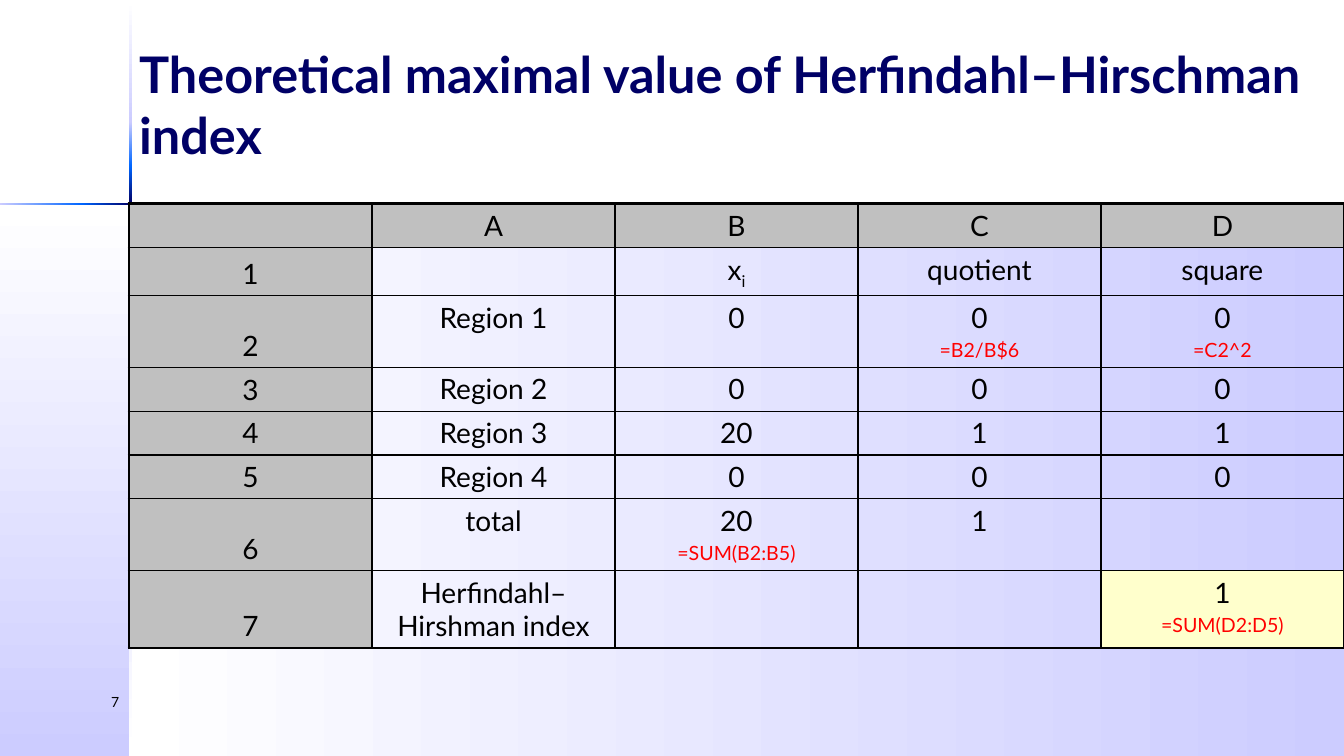
from copy import deepcopy
from dataclasses import dataclass
from itertools import pairwise

from lxml.etree import SubElement
from pptx import Presentation
from pptx.dml.color import RGBColor
from pptx.enum.shapes import MSO_SHAPE
from pptx.enum.text import MSO_ANCHOR, MSO_AUTO_SIZE, PP_ALIGN
from pptx.oxml.ns import qn
from pptx.slide import Slide
from pptx.table import _Cell
from pptx.util import Inches, Pt

FONT = "Lato"
BLACK = RGBColor(0x00, 0x00, 0x00)
WHITE = RGBColor(0xFF, 0xFF, 0xFF)
NAVY = RGBColor(0x00, 0x00, 0x66)
BLUE = RGBColor(0x00, 0x66, 0xFF)
LAVENDER = RGBColor(0xCC, 0xCC, 0xFF)
GRAY = RGBColor(0xC0, 0xC0, 0xC0)
CREAM = RGBColor(0xFF, 0xFF, 0xCC)
RED = RGBColor(0xFF, 0x00, 0x00)

SLIDE_WIDTH, SLIDE_HEIGHT = 13.33, 7.5
AXIS_X, AXIS_Y = 1.28, 2.02
PANEL_LEFT = 1.29
HAIR = 0.03, 0.02  # thickness of the upright and the level rule
OUTER_BORDER, INNER_BORDER = Pt(2.25), Pt(1)


@dataclass(frozen=True)
class Band:
    left: float
    top: float
    width: float
    height: float
    colors: tuple[RGBColor, ...]
    downward: bool


@dataclass(frozen=True)
class Entry:
    value: str = ""
    formula: str = ""
    subscript: str = ""


RISE = (LAVENDER, BLUE)
PEAK = (BLUE, NAVY, BLUE)
FALL = (BLUE, LAVENDER)
FADE = (LAVENDER, WHITE)
PANELS = [
    Band(PANEL_LEFT, AXIS_Y, SLIDE_WIDTH - PANEL_LEFT, SLIDE_HEIGHT - AXIS_Y,
         (WHITE, LAVENDER), False),
    Band(0, AXIS_Y, PANEL_LEFT, SLIDE_HEIGHT - AXIS_Y, (WHITE, LAVENDER), True),
]
UPRIGHT_STOPS = [0.01, 1.21, 1.65, 2.38, 2.82, SLIDE_HEIGHT]
UPRIGHT_COLORS = [(WHITE, LAVENDER), RISE, PEAK, FALL, FADE]
LEVEL_STOPS = [0, 0.81, 1.78, 2.36, SLIDE_WIDTH]
LEVEL_COLORS = [RISE, PEAK, FALL, FADE]
RULES = [
    Band(AXIS_X, start, HAIR[0], end - start, colors, True)
    for (start, end), colors in zip(pairwise(UPRIGHT_STOPS), UPRIGHT_COLORS)
] + [
    Band(start, AXIS_Y - 0.01, end - start, HAIR[1], colors, False)
    for (start, end), colors in zip(pairwise(LEVEL_STOPS), LEVEL_COLORS)
]

EMPTY, ZERO, ONE = Entry(), Entry("0"), Entry("1")
SHEET = [
    [Entry(letter) for letter in ("A", "B", "C", "D")],
    [EMPTY, Entry("x", subscript="i"), Entry("quotient"), Entry("square")],
    [Entry("Region 1"), ZERO, Entry("0", "=B2/B$6"), Entry("0", "=C2^2")],
    [Entry("Region 2"), ZERO, ZERO, ZERO],
    [Entry("Region 3"), Entry("20"), ONE, ONE],
    [Entry("Region 4"), ZERO, ZERO, ZERO],
    [Entry("total"), Entry("20", "=SUM(B2:B5)"), ONE, EMPTY],
    [Entry("Herfindahl–Hirshman index"), EMPTY, EMPTY, Entry("1", "=SUM(D2:D5)")],
]
ROW_HEIGHTS = [0.43] * 7 + [0.77]
COLUMN_WIDTH = 2.41


def add_run(paragraph, text: str, size: float, color: RGBColor = BLACK, bold: bool = False):
    run = paragraph.add_run()
    run.text = text
    for name, value in {"name": FONT, "size": Pt(size), "bold": bold}.items():
        setattr(run.font, name, value)
    run.font.color.rgb = color
    return run


def add_band(slide: Slide, band: Band) -> None:
    shape = slide.shapes.add_shape(
        MSO_SHAPE.RECTANGLE,
        *map(Inches, (band.left, band.top, band.width, band.height)))
    shape.shadow.inherit = False
    shape.line.fill.background()
    shape.fill.gradient()
    shape.fill.gradient_angle = 270 if band.downward else 0
    stop_list = shape._element.spPr.find(f".//{qn('a:gsLst')}")
    for _ in band.colors[2:]:
        stop_list.append(deepcopy(stop_list[-1]))
    for index, (stop, color) in enumerate(zip(shape.fill.gradient_stops, band.colors)):
        stop.position = index / (len(band.colors) - 1)
        stop.color.rgb = color


def set_borders(cell: _Cell, widths: dict[str, int]) -> None:
    properties = cell._tc.get_or_add_tcPr()
    for index, (side, width) in enumerate(widths.items()):
        line = SubElement(properties, qn(f"a:ln{side}"), w=str(width))
        fill = SubElement(line, qn("a:solidFill"))
        SubElement(fill, qn("a:srgbClr"), val=str(BLACK))
        properties.insert(index, line)


def write_entry(cell: _Cell, entry: Entry) -> None:
    lines = [(entry.value, 20, BLACK)]
    if entry.formula:
        lines.append((entry.formula, 14, RED))
    frame = cell.text_frame
    for index, (text, size, color) in enumerate(lines):
        paragraph = frame.add_paragraph() if index else frame.paragraphs[0]
        paragraph.alignment = PP_ALIGN.CENTER
        paragraph.space_before = Pt(size * 0.2)
        if text:
            add_run(paragraph, text, size, color)
    if entry.subscript:
        run = add_run(frame.paragraphs[0], entry.subscript, 20)
        run._r.get_or_add_rPr().set("baseline", "-25000")


def add_sheet(slide: Slide) -> None:
    rows = [[Entry(str(number) if number else ""), *entries]
            for number, entries in enumerate(SHEET)]
    last_row, last_column = len(rows) - 1, len(rows[0]) - 1
    table = slide.shapes.add_table(
        len(rows), len(rows[0]), Inches(AXIS_X), Inches(AXIS_Y),
        Inches(COLUMN_WIDTH * len(rows[0])), Inches(sum(ROW_HEIGHTS))).table
    table.first_row = table.horz_banding = False
    for column in table.columns:
        column.width = Inches(COLUMN_WIDTH)
    for r, entries in enumerate(rows):
        table.rows[r].height = Inches(ROW_HEIGHTS[r])
        for c, entry in enumerate(entries):
            cell = table.cell(r, c)
            write_entry(cell, entry)
            cell.vertical_anchor = MSO_ANCHOR.BOTTOM if r and not c else MSO_ANCHOR.TOP
            if r == 0 or c == 0:
                cell.fill.solid()
                cell.fill.fore_color.rgb = GRAY
            elif (r, c) == (last_row, last_column):
                cell.fill.solid()
                cell.fill.fore_color.rgb = CREAM
            else:
                cell.fill.background()
            on_edge = {"L": c == 0, "R": c == last_column, "T": r == 0, "B": r == last_row}
            set_borders(cell, {side: OUTER_BORDER if outer else INNER_BORDER
                               for side, outer in on_edge.items()})


def format_title(slide: Slide) -> None:
    title = slide.shapes.title
    box = {"left": 1.28, "top": 0, "width": 12.05, "height": AXIS_Y}
    for name, value in box.items():
        setattr(title, name, Inches(value))
    frame_format = {"vertical_anchor": MSO_ANCHOR.BOTTOM, "word_wrap": True,
                    "auto_size": MSO_AUTO_SIZE.NONE, "margin_bottom": Inches(0.39)}
    for name, value in frame_format.items():
        setattr(title.text_frame, name, value)
    paragraph = title.text_frame.paragraphs[0]
    paragraph.alignment = PP_ALIGN.LEFT
    add_run(paragraph, "Theoretical maximal value of Herfindahl–Hirschman index", 36, NAVY, True)
    slide.shapes._spTree.append(title._element)  # in front of the bands


def add_page_number(slide: Slide) -> None:
    frame = slide.shapes.add_textbox(
        Inches(0), Inches(6.83), Inches(1.28), Inches(0.5)).text_frame
    frame.word_wrap = True
    frame.paragraphs[0].alignment = PP_ALIGN.RIGHT
    add_run(frame.paragraphs[0], "7", 10)


def main() -> None:
    presentation = Presentation()
    presentation.slide_width = Inches(SLIDE_WIDTH)
    presentation.slide_height = Inches(SLIDE_HEIGHT)
    slide = presentation.slides.add_slide(presentation.slide_layouts[5])
    for band in PANELS + RULES:
        add_band(slide, band)
    add_page_number(slide)
    format_title(slide)
    add_sheet(slide)
    presentation.save("out.pptx")


if __name__ == "__main__":
    main()
